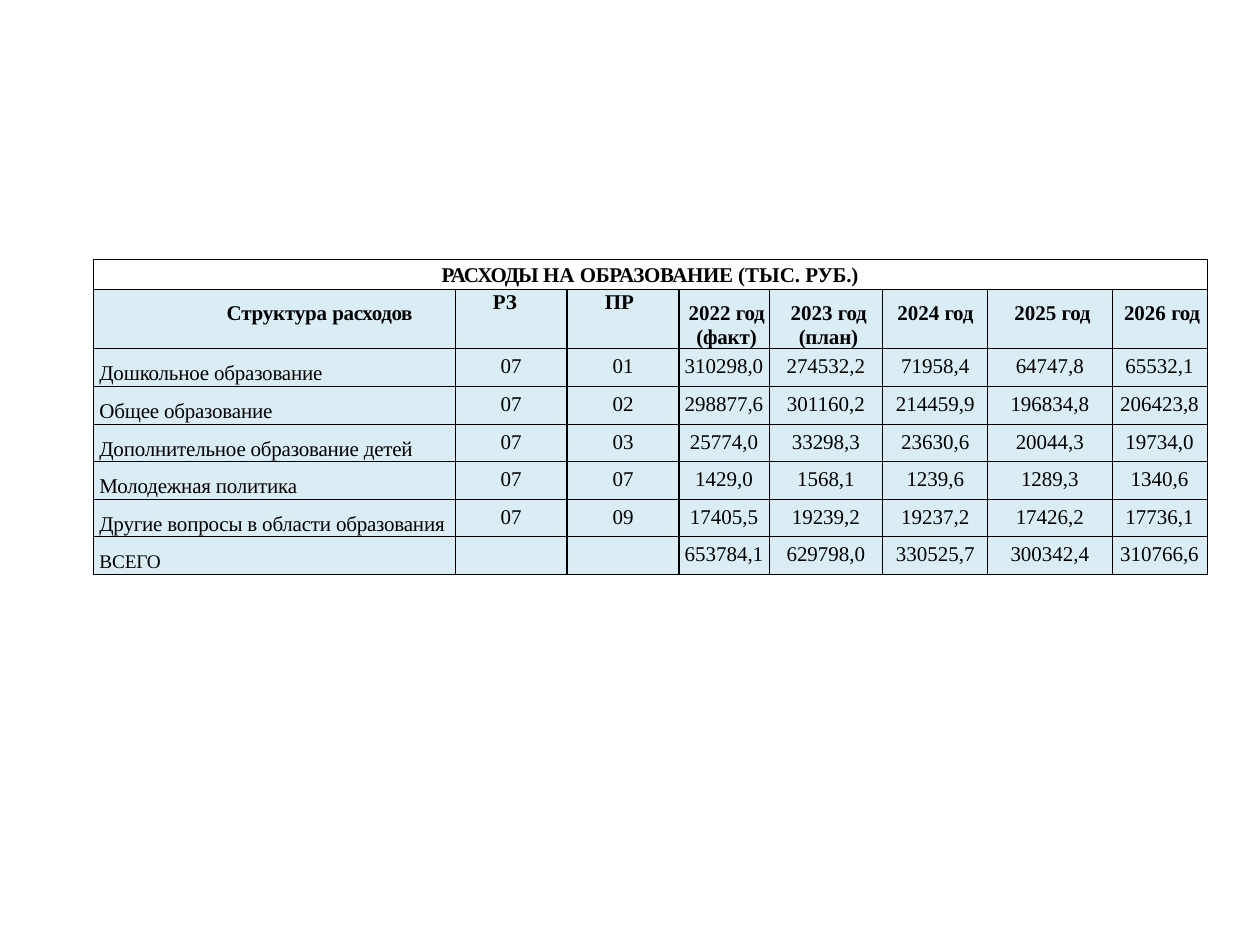
from lxml.etree import SubElement
from pptx import Presentation
from pptx.dml.color import RGBColor
from pptx.enum.text import PP_ALIGN
from pptx.oxml.ns import qn
from pptx.util import Pt

# Text pieces are (text, letter spacing in points)
TITLE = [("РАСХОДЫ ", -0.6), ("НА ", 0), ("ОБРАЗОВАНИЕ ", -0.2), ("(ТЫС. ", 0), ("РУБ.)", -0.1)]
STRUCTURE = [("Структура ", -0.1), ("расходов", -0.2)]
CODES = ["РЗ", "ПР"]
YEARS = [("2022", "(факт)"), ("2023", "(план)"), ("2024", ""), ("2025", ""), ("2026", "")]
EXPENSES = [
    ("Дошкольное образование", "07", "01", "310298,0", "274532,2", "71958,4", "64747,8", "65532,1"),
    ("Общее образование", "07", "02", "298877,6", "301160,2", "214459,9", "196834,8", "206423,8"),
    ("Дополнительное образование детей", "07", "03", "25774,0", "33298,3", "23630,6", "20044,3", "19734,0"),
    ("Молодежная политика", "07", "07", "1429,0", "1568,1", "1239,6", "1289,3", "1340,6"),
    ("Другие вопросы в области образования", "07", "09", "17405,5", "19239,2", "19237,2", "17426,2", "17736,1"),
    ("ВСЕГО", "", "", "653784,1", "629798,0", "330525,7", "300342,4", "310766,6"),
]
COLUMN_WIDTHS = [206.9, 64, 64, 51.4, 65.1, 60, 70.9, 54.4]
ROW_HEIGHTS = [17.2, 28] + [21.5] * len(EXPENSES)
LEFT, TOP = 53.2, 148.3
FONT = "Times New Roman"
BLACK, PALE_BLUE = "000000", "DBEDF4"
THICK_EDGES = (2, 3)  # column edges around the ПР column


def color(value):
    return RGBColor.from_string(value)


def draw_borders(cell, row, column):
    def width(edge):
        return 1 if row and edge in THICK_EDGES else 0.5

    sides = {"a:lnL": width(column), "a:lnR": width(column + 1), "a:lnT": 0.5, "a:lnB": 0.5}
    for side, points in sides.items():
        line = SubElement(cell._tc.get_or_add_tcPr(), qn(side), w=str(Pt(points)))
        SubElement(SubElement(line, qn("a:solidFill")), qn("a:srgbClr"), val=BLACK)


def write(cell, pieces, top=0, indent=0, centered=True, bold=False, size=12, line=None):
    cell.margin_left = cell.margin_right = cell.margin_bottom = 0
    cell.margin_top = Pt(top)
    paragraph = cell.text_frame.paragraphs[0]
    paragraph.alignment = PP_ALIGN.CENTER if centered else PP_ALIGN.LEFT
    if indent:
        paragraph._p.get_or_add_pPr().set("marL", str(Pt(indent)))
    if line:
        paragraph.line_spacing = Pt(line)
    font = paragraph.font
    font.name, font.size, font.bold = FONT, Pt(size), bold
    font.color.rgb = color(BLACK)
    for text, spacing in pieces:
        run = paragraph.add_run()
        run.text = text
        if spacing:
            run._r.get_or_add_rPr().set("spc", str(round(spacing * 100)))
    if not pieces:
        SubElement(paragraph._p, qn("a:endParaRPr"), sz=str(size * 100))


presentation = Presentation()
presentation.slide_width, presentation.slide_height = Pt(720), Pt(540)
slide = presentation.slides.add_slide(presentation.slide_layouts[6])
table = slide.shapes.add_table(
    len(ROW_HEIGHTS), len(COLUMN_WIDTHS), Pt(LEFT), Pt(TOP),
    Pt(sum(COLUMN_WIDTHS)), Pt(sum(ROW_HEIGHTS))).table
table.first_row = table.horz_banding = False
for column, width in zip(table.columns, COLUMN_WIDTHS):
    column.width = Pt(width)
for row, height in zip(table.rows, ROW_HEIGHTS):
    row.height = Pt(height)

for r in range(len(ROW_HEIGHTS)):
    for c in range(len(COLUMN_WIDTHS)):
        cell = table.cell(r, c)
        draw_borders(cell, r, c)
        if r:
            cell.fill.solid()
            cell.fill.fore_color.rgb = color(PALE_BLUE)
        else:
            cell.fill.background()

table.cell(0, 0).merge(table.cell(0, len(COLUMN_WIDTHS) - 1))
write(table.cell(0, 0), TITLE, top=2.2, bold=True, line=13.7)

write(table.cell(1, 0), STRUCTURE, top=7.2, indent=76.3, centered=False, bold=True)
for c, code in enumerate(CODES, 1):
    write(table.cell(1, c), [(code, 0)], top=0.7, indent=21.6, centered=False, bold=True)
for c, (year, status) in enumerate(YEARS, 1 + len(CODES)):
    pieces = [(year + " ", 0), ("год " if status else "год", -0.2)]
    if status:
        pieces.append((status, -0.1))
    write(table.cell(1, c), pieces, top=7.2, indent=0 if year == "2024" else 2.9, bold=True)

for r, (name, *values) in enumerate(EXPENSES, 2):
    is_total = r == len(ROW_HEIGHTS) - 1
    write(table.cell(r, 0), [(name, -0.1)], top=7.9 if is_total else 7.2, indent=3.6,
          centered=False, size=11 if is_total else 12, line=12.4 if is_total else 13.7)
    for c, value in enumerate(values, 1):
        write(table.cell(r, c), [(value, 0)] if value else [], top=3.6)

presentation.save("out.pptx")
